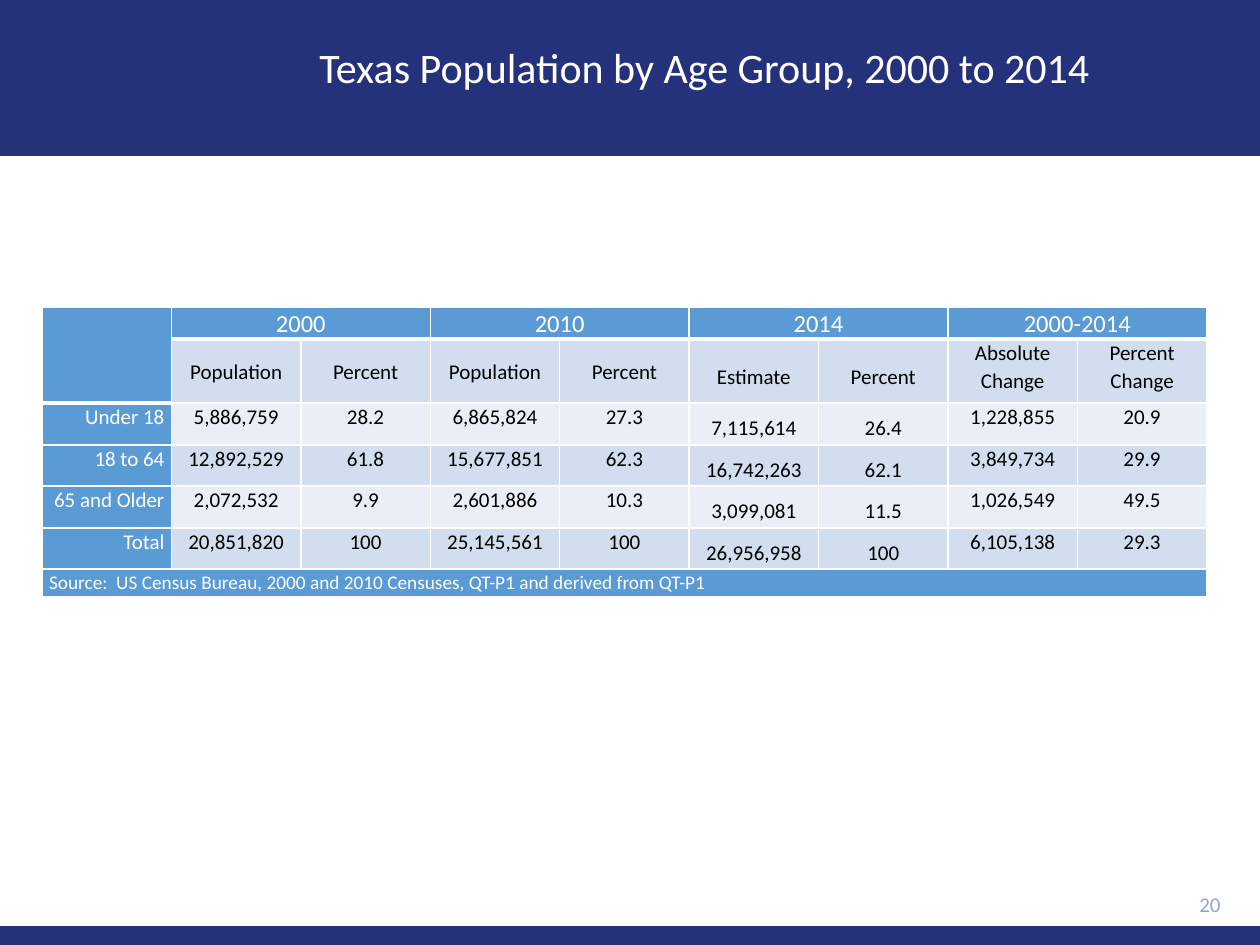
from pptx import Presentation
from pptx.dml.color import RGBColor
from pptx.enum.shapes import MSO_SHAPE as Kind
from pptx.enum.text import MSO_ANCHOR as Anchor, PP_ALIGN as Align
from pptx.oxml.ns import qn
from pptx.util import Pt
from lxml.etree import SubElement

TITLE = "Texas Population by Age Group, 2000 to 2014"
YEARS = ["2000", "2010", "2014", "2000-2014"]
HEADS = ["Population", "Percent", "Population", "Percent", "Estimate",
         "Percent", "Absolute Change", "Percent Change"]
GROUPS = [
    ["Under 18", "5,886,759", "28.2", "6,865,824", "27.3",
     "7,115,614", "26.4", "1,228,855", "20.9"],
    ["18 to 64", "12,892,529", "61.8", "15,677,851", "62.3",
     "16,742,263", "62.1", "3,849,734", "29.9"],
    ["65 and Older", "2,072,532", "9.9", "2,601,886", "10.3",
     "3,099,081", "11.5", "1,026,549", "49.5"],
    ["Total", "20,851,820", "100", "25,145,561", "100",
     "26,956,958", "100", "6,105,138", "29.3"],
]
SOURCE = "Source:  US Census Bureau, 2000 and 2010 Censuses, QT-P1 and derived from QT-P1"
PAGE = "20"

NAVY, BLUE, WHITE, BLACK = "25327B", "5B9BD5", "FFFFFF", "000000"
BANDS = ["EAEFF7", "D2DEEF"]
ROWS = [32, 64, 42, 41, 42, 41, 28]
COLS = 9
LAST = len(ROWS) - 1
FONT = "Calibri"


def px(n):
    return round(n * 914400 / 126)


def box(*dims):
    return [px(n) for n in dims]


def paint(fill, tone):
    fill.solid()
    fill.fore_color.rgb = RGBColor.from_string(tone)


def write(frame, text, size, tone, align, gap=None, after=None):
    para = frame.paragraphs[0]
    para.alignment = align
    para.line_spacing = gap
    if after:
        para.space_after = Pt(after)
    if not text:
        SubElement(para._p, qn("a:endParaRPr"), sz=str(size * 100))
        return
    run = para.add_run()
    run.text = text
    run.font.size = Pt(size)
    run.font.name = FONT
    paint(run.font.fill, tone)


def band(top, high):
    bar = slide.shapes.add_shape(Kind.RECTANGLE, *box(0, top, 1260, high))
    bar.shadow.inherit = False
    paint(bar.fill, NAVY)
    bar.line.fill.background()


def rule(row, col):
    return 3 if row == 0 or (row, col) == (1, 0) else 1


def edge(cell, row, col):
    props = cell._tc.get_or_add_tcPr()
    widths = {"L": 1, "R": 1, "T": rule(row - 1, col), "B": rule(row, col)}
    for side, wide in widths.items():
        line = SubElement(props, qn("a:ln" + side), w=str(Pt(wide)))
        SubElement(SubElement(line, qn("a:solidFill")), qn("a:srgbClr"), val=WHITE)


def style(row, col):
    if row == 0:
        return 14, WHITE, Align.CENTER, 1.07, None
    if row == LAST:
        return 11, WHITE, Align.LEFT, 1.07, None
    if col == 0:
        return 12, WHITE, Align.RIGHT, 1.07, None
    gap = 1.5 if col in (5, 6) else 1.07
    return 12, BLACK, Align.CENTER, gap, 8 if row > 1 and col > 6 else None


deck = Presentation()
deck.slide_width, deck.slide_height = box(1260, 945)
slide = deck.slides.add_slide(deck.slide_layouts[5])

band(0, 156)
band(926, 19)

title = slide.shapes.title
title.left, title.top, title.width, title.height = box(159, 23, 1091, 94)
title.text_frame.vertical_anchor = Anchor.MIDDLE
write(title.text_frame, TITLE, 24, WHITE, Align.CENTER, 0.9)
slide.shapes._spTree.append(title._element)

top = [""]
for year in YEARS:
    top += [year, ""]
texts = [top, [""] + HEADS, *GROUPS, [SOURCE] + [""] * (COLS - 1)]

grid = slide.shapes.add_table(len(ROWS), COLS, *box(42, 307, 1165, sum(ROWS))).table
for line, high in zip(grid.rows, ROWS):
    line.height = px(high)
for row, words in enumerate(texts):
    for col, word in enumerate(words):
        cell = grid.cell(row, col)
        edge(cell, row, col)
        blue = row in (0, LAST) or col == 0
        paint(cell.fill, BLUE if blue else BANDS[row % 2])
        cell.margin_left = cell.margin_right = px(7)
        cell.margin_top = cell.margin_bottom = 0
        if row == 1 and col < 7:
            cell.vertical_anchor = Anchor.MIDDLE
        write(cell.text_frame, word, *style(row, col))
for row in (2, 4):
    for col in range(1, COLS):
        paint(grid.cell(row, col).fill, BANDS[0])
        paint(grid.cell(row + 1, col).fill, BANDS[1])
for col in range(1, COLS):
    paint(grid.cell(1, col).fill, BANDS[1])
grid.cell(0, 0).merge(grid.cell(1, 0))
for col in range(1, COLS, 2):
    grid.cell(0, col).merge(grid.cell(0, col + 1))
grid.cell(LAST, 0).merge(grid.cell(LAST, COLS - 1))

page = slide.shapes.add_textbox(*box(1121, 883, 112, 43)).text_frame
page.word_wrap = True
page.vertical_anchor = Anchor.MIDDLE
write(page, PAGE, 12, "8FA5D1", Align.RIGHT)

deck.save("out.pptx")
